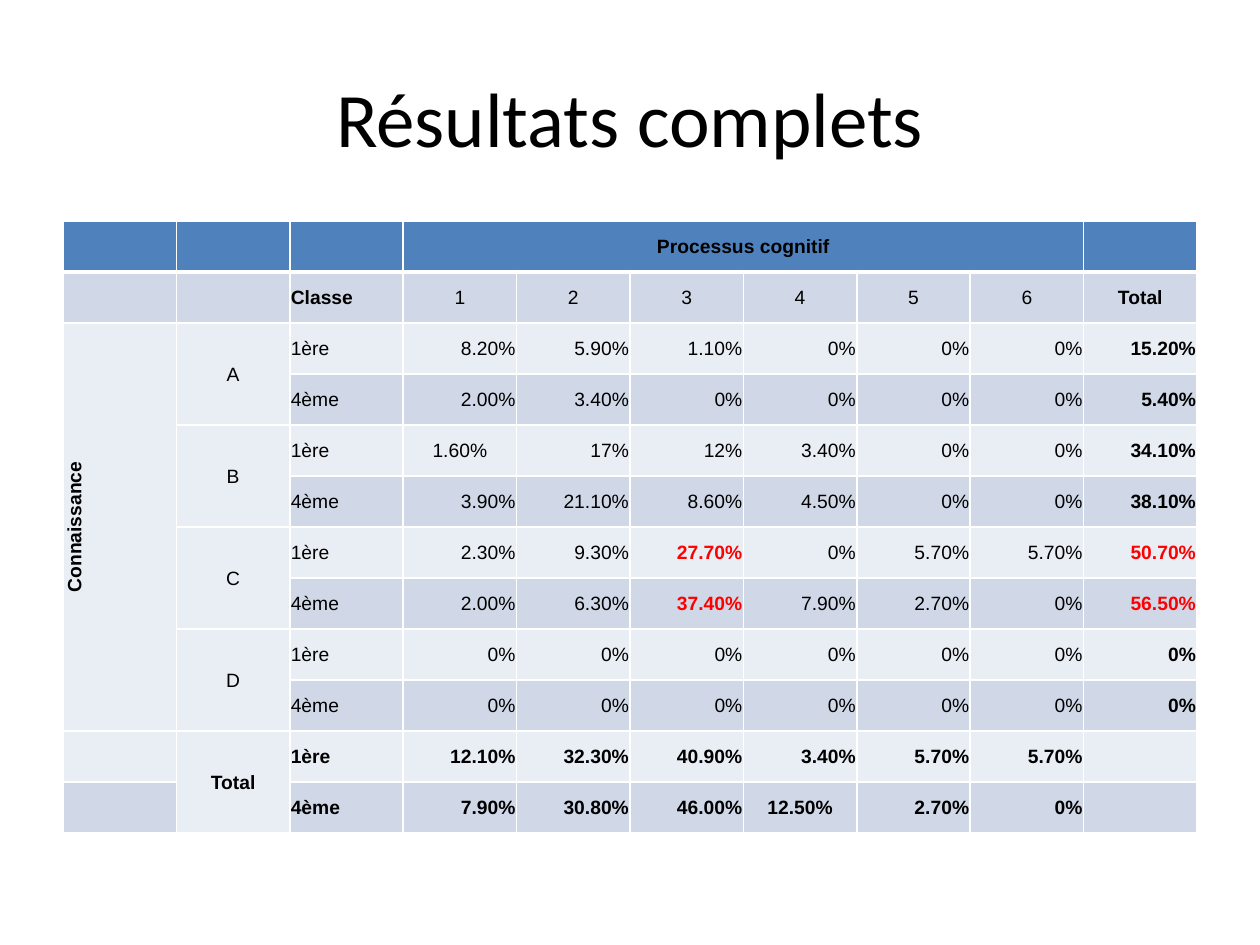
from dataclasses import dataclass

from lxml import etree
from pptx import Presentation
from pptx.dml.color import RGBColor
from pptx.enum.text import MSO_ANCHOR, PP_ALIGN
from pptx.oxml.ns import qn
from pptx.util import Pt

LEFT, CENTER = PP_ALIGN.JUSTIFY, PP_ALIGN.CENTER
RIGHT, MIDDLE = PP_ALIGN.RIGHT, MSO_ANCHOR.MIDDLE
EMU_PER_PX = 914400 / 126


@dataclass(frozen=True)
class Theme:
    title_font: str = "Calibri"
    table_font: str = "Arial"
    title_size: int = 44
    table_size: int = 11
    text: str = "000000"
    highlight: str = "FF0000"
    header: str = "4F81BD"
    bands: tuple = ("E9EDF4", "D0D8E8")
    rule: str = "FFFFFF"
    rule_width: int = 1
    header_rule_width: int = 3


THEME = Theme()
TITLE = "Résultats complets"
TITLE_BOX = (63, 38, 1134, 158)
TABLE_LEFT, TABLE_TOP = 63, 221
COL_WIDTH, ROW_HEIGHT = 113.4, 51

ROWS = [
    ["", "", "", "Processus cognitif", "", "", "", "", "", ""],
    ["", "", "Classe", "1", "2", "3", "4", "5", "6", "Total"],
    ["Connaissance", "A", "1ère", "8.20%", "5.90%", "1.10%", "0%", "0%", "0%", "15.20%"],
    ["", "", "4ème", "2.00%", "3.40%", "0%", "0%", "0%", "0%", "5.40%"],
    ["", "B", "1ère", "1.60%", "17%", "12%", "3.40%", "0%", "0%", "34.10%"],
    ["", "", "4ème", "3.90%", "21.10%", "8.60%", "4.50%", "0%", "0%", "38.10%"],
    ["", "C", "1ère", "2.30%", "9.30%", "27.70%", "0%", "5.70%", "5.70%", "50.70%"],
    ["", "", "4ème", "2.00%", "6.30%", "37.40%", "7.90%", "2.70%", "0%", "56.50%"],
    ["", "D", "1ère", "0%", "0%", "0%", "0%", "0%", "0%", "0%"],
    ["", "", "4ème", "0%", "0%", "0%", "0%", "0%", "0%", "0%"],
    ["", "Total", "1ère", "12.10%", "32.30%", "40.90%", "3.40%", "5.70%", "5.70%", ""],
    ["", "", "4ème", "7.90%", "30.80%", "46.00%", "12.50%", "2.70%", "0%", ""],
]
CLASS_COL, TOTAL_COL = 2, 9
FIRST_TOTAL_ROW = 10
BOLD_LABELS = {"Processus cognitif", "Classe", "Connaissance"}
HIGHLIGHTS = {(row, col) for row in (6, 7) for col in (5, TOTAL_COL)}
CENTERED_VALUES = {(4, 3), (11, 6)}
VERTICAL_CELL = (2, 0)
MERGES = [((0, 3), (0, 8)), (VERTICAL_CELL, (9, 0))]
MERGES += [((row, 1), (row + 1, 1)) for row in range(2, len(ROWS), 2)]


def px(value):
    return round(value * EMU_PER_PX)


def style_run(r, font, size, color, bold=False):
    r.font.name, r.font.size, r.font.bold = font, Pt(size), bold
    r.font.color.rgb = RGBColor.from_string(color)


def alignment(row, col):
    if col == CLASS_COL:
        return LEFT
    if row < 2 or col < CLASS_COL or (row, col) in CENTERED_VALUES:
        return CENTER
    return RIGHT


def set_borders(cell, row):
    tc_pr = cell._tc.get_or_add_tcPr()
    for side in "LRTB":
        under_header = (row, side) in {(0, "B"), (1, "T")}
        width = THEME.header_rule_width if under_header else THEME.rule_width
        line = etree.SubElement(tc_pr, qn(f"a:ln{side}"), w=str(Pt(width)))
        fill = etree.SubElement(line, qn("a:solidFill"))
        etree.SubElement(fill, qn("a:srgbClr"), val=THEME.rule)


def fill_cell(cell, row, col, text):
    cell.margin_left = cell.margin_right = cell.margin_top = px(1)
    cell.margin_bottom = 0
    cell.vertical_anchor = MIDDLE
    set_borders(cell, row)
    cell.fill.solid()
    band = THEME.bands[row % 2] if row else THEME.header
    cell.fill.fore_color.rgb = RGBColor.from_string(band)
    if (row, col) == VERTICAL_CELL:
        cell._tc.tcPr.set("vert", "vert270")

    p = cell.text_frame.paragraphs[0]
    p.font.size = Pt(THEME.table_size)
    if text:
        p.text = text
        p.alignment = alignment(row, col)
        bold = (text in BOLD_LABELS or col == TOTAL_COL
                or row >= FIRST_TOTAL_ROW or (row, col) in HIGHLIGHTS)
        color = THEME.highlight if (row, col) in HIGHLIGHTS else THEME.text
        style_run(p.runs[0], THEME.table_font, THEME.table_size, color, bold)


def add_title(slide):
    tf = slide.shapes.add_textbox(*map(px, TITLE_BOX)).text_frame
    tf.word_wrap = True
    tf.vertical_anchor = MIDDLE
    tf.text = TITLE
    p = tf.paragraphs[0]
    p.alignment = CENTER
    style_run(p.runs[0], THEME.title_font, THEME.title_size, THEME.text)


def add_results(slide):
    n_rows, n_cols = len(ROWS), len(ROWS[0])
    table = slide.shapes.add_table(
        n_rows, n_cols, px(TABLE_LEFT), px(TABLE_TOP),
        px(n_cols * COL_WIDTH), px(n_rows * ROW_HEIGHT)).table
    for column in table.columns:
        column.width = px(COL_WIDTH)
    for table_row in table.rows:
        table_row.height = px(ROW_HEIGHT)
    for row, values in enumerate(ROWS):
        for col, text in enumerate(values):
            fill_cell(table.cell(row, col), row, col, text)
    for first, last in MERGES:
        table.cell(*first).merge(table.cell(*last))


def main():
    prs = Presentation()
    prs.slide_width, prs.slide_height = px(1260), px(945)
    slide = prs.slides.add_slide(prs.slide_layouts[6])
    add_title(slide)
    add_results(slide)
    prs.save("out.pptx")


if __name__ == "__main__":
    main()
